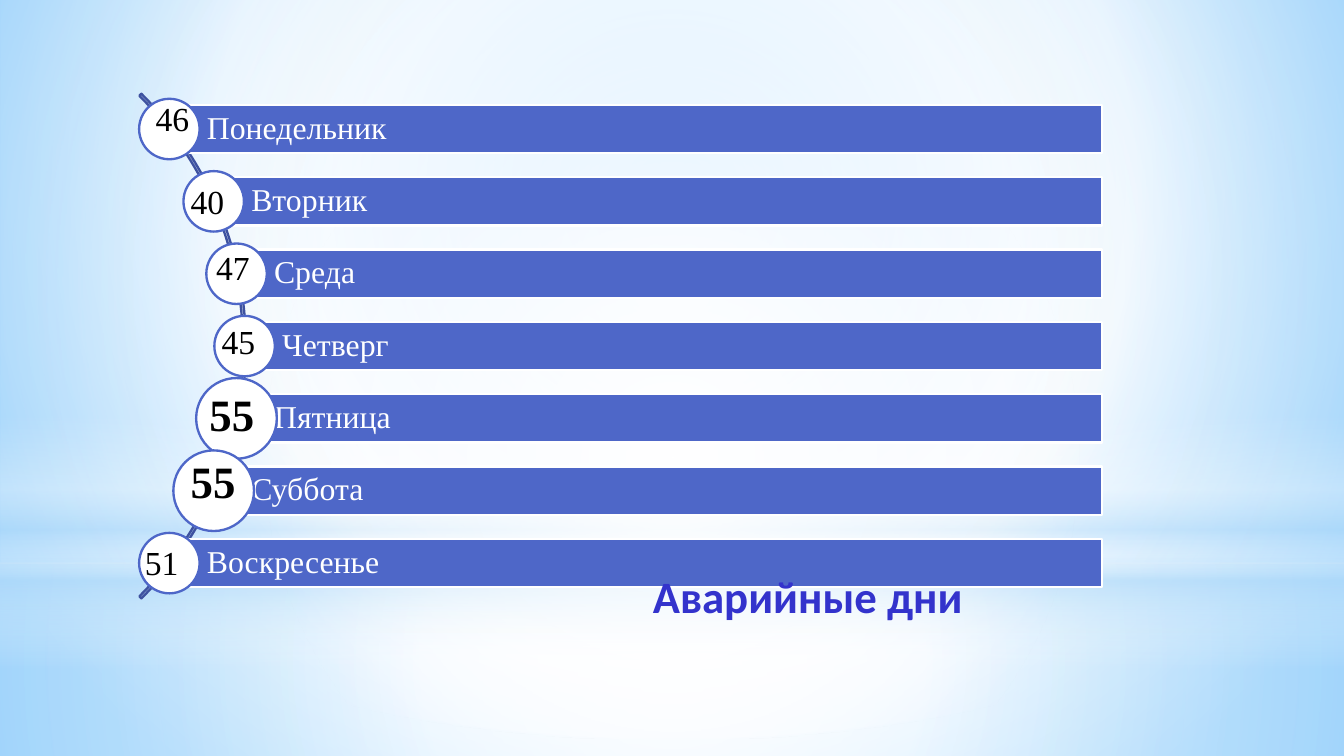
from dataclasses import dataclass

from lxml import etree
from pptx import Presentation
from pptx.dml.color import RGBColor
from pptx.enum.shapes import MSO_SHAPE
from pptx.enum.text import MSO_ANCHOR, PP_ALIGN
from pptx.oxml.ns import qn
from pptx.util import Inches, Pt

RECTANGLE, OVAL, BLOCK_ARC = MSO_SHAPE.RECTANGLE, MSO_SHAPE.OVAL, MSO_SHAPE.BLOCK_ARC
MIDDLE, LEFT, CENTER = MSO_ANCHOR.MIDDLE, PP_ALIGN.LEFT, PP_ALIGN.CENTER

WHITE = RGBColor(0xFF, 0xFF, 0xFF)
BLACK = RGBColor(0x00, 0x00, 0x00)
BAR_BLUE = RGBColor(0x4E, 0x67, 0xC8)
ARC_BLUE = RGBColor(0x3E, 0x52, 0xA0)
TITLE_BLUE = RGBColor(0x33, 0x33, 0xCC)
PALE_BLUE = RGBColor(0xB4, 0xDC, 0xFA)
SKY = RGBColor(0x9E, 0xD5, 0xFF)
DEEP_SKY = RGBColor(0x5B, 0xB9, 0xFF)

SERIF, SANS = "Times New Roman", "Calibri"
SLIDE_WIDTH = 10
SLIDE_HEIGHT = SLIDE_WIDTH * 9 / 16
FIRST_CENTER, LAST_CENTER = 0.96, 4.19
BAR_RIGHT, BAR_HEIGHT = 8.2, 0.36
MIDPOINT = (50, 50, 50, 50)


@dataclass(frozen=True)
class Stop:
    position: int
    color: RGBColor
    opacity: int = 100


@dataclass(frozen=True)
class Glow:
    kind: MSO_SHAPE
    top: float
    height: float
    stops: tuple[Stop, ...]
    focus: tuple[int, ...] | None = MIDPOINT


@dataclass(frozen=True)
class Day:
    name: str
    count: str
    center_x: float
    count_left: float
    count_top: float
    count_width: float
    peak: bool = False


GLOWS = (
    Glow(RECTANGLE, 4.19, 1.44,
         (Stop(0, WHITE, 91), Stop(37, WHITE, 76), Stop(100, PALE_BLUE, 79))),
    Glow(RECTANGLE, 0, 4.19,
         (Stop(0, WHITE, 89), Stop(48, WHITE, 62), Stop(100, PALE_BLUE, 79))),
    Glow(RECTANGLE, 3.09, 1.88,
         (Stop(0, WHITE, 0), Stop(29, WHITE, 30), Stop(45, PALE_BLUE, 40),
          Stop(55, WHITE, 26), Stop(65, PALE_BLUE, 60), Stop(100, WHITE, 0)), None),
    Glow(OVAL, 1.31, 4.19, (Stop(0, WHITE), Stop(56, WHITE, 0))),
)

DAYS = (
    Day("Понедельник", "46", 1.26, 1.06, 0.68, 0.48),
    Day("Вторник", "40", 1.59, 1.32, 1.3, 0.68),
    Day("Среда", "47", 1.76, 1.51, 1.79, 0.54),
    Day("Четверг", "45", 1.82, 1.55, 2.34, 0.62),
    Day("Пятница", "55", 1.76, 1.46, 2.83, 0.54, True),
    Day("Суббота", "55", 1.59, 1.32, 3.33, 0.61, True),
    Day("Воскресенье", "51", 1.26, 0.98, 3.98, 0.59),
)


def set_gradient(fill, owner, stops: tuple[Stop, ...], focus: tuple[int, ...] | None) -> None:
    """Fill with stops: radial around focus (left, top, right, bottom %), else downward."""
    fill.gradient()
    gradient = next(owner.iter(qn("a:gradFill")))
    for child in list(gradient):
        gradient.remove(child)
    stop_list = etree.SubElement(gradient, qn("a:gsLst"))
    for stop in stops:
        mark = etree.SubElement(stop_list, qn("a:gs"), pos=str(stop.position * 1000))
        color = etree.SubElement(mark, qn("a:srgbClr"), val=str(stop.color))
        if stop.opacity < 100:
            etree.SubElement(color, qn("a:alpha"), val=str(stop.opacity * 1000))
    if focus is None:
        etree.SubElement(gradient, qn("a:lin"), ang="5400000", scaled="0")
    else:
        radial = etree.SubElement(gradient, qn("a:path"), path="circle")
        sides = {side: str(value * 1000) for side, value in zip("ltrb", focus)}
        etree.SubElement(radial, qn("a:fillToRect"), **sides)


def add_plain_shape(slide, kind: MSO_SHAPE, left: float, top: float, width: float,
                    height: float, fill: RGBColor | None = None,
                    line: RGBColor | None = None):
    shape = slide.shapes.add_shape(kind, Inches(left), Inches(top), Inches(width), Inches(height))
    shape.shadow.inherit = False
    if fill is None:
        shape.fill.background()
    else:
        shape.fill.solid()
        shape.fill.fore_color.rgb = fill
    if line is None:
        shape.line.fill.background()
    else:
        shape.line.color.rgb = line
        shape.line.width = Pt(1.25)
    return shape


def write(frame, text: str, size: int, color: RGBColor, font: str = SERIF,
          bold: bool = False, align: PP_ALIGN = LEFT):
    frame.word_wrap = True
    paragraph = frame.paragraphs[0]
    paragraph.text = text
    paragraph.alignment = align
    paragraph.font.name = font
    paragraph.font.size = Pt(size)
    paragraph.font.bold = bold
    paragraph.font.color.rgb = color
    return paragraph


def add_label(slide, left: float, top: float, width: float, height: float):
    box = slide.shapes.add_textbox(Inches(left), Inches(top), Inches(width), Inches(height))
    return box.text_frame


def add_day(slide, day: Day, center_y: float) -> None:
    bar = add_plain_shape(slide, RECTANGLE, day.center_x, center_y - BAR_HEIGHT / 2,
                          BAR_RIGHT - day.center_x, BAR_HEIGHT, BAR_BLUE, WHITE)
    frame = bar.text_frame
    frame.vertical_anchor = MIDDLE
    frame.margin_left = Inches(0.28)
    frame.margin_top = frame.margin_right = frame.margin_bottom = Inches(0.05)
    write(frame, day.name, 17, WHITE).line_spacing = 0.9
    diameter = 0.6 if day.peak else 0.45
    add_plain_shape(slide, OVAL, day.center_x - diameter / 2, center_y - diameter / 2,
                    diameter, diameter, WHITE, BAR_BLUE)


def add_count(slide, day: Day) -> None:
    size, height = (24, 0.5) if day.peak else (18, 0.4)
    frame = add_label(slide, day.count_left, day.count_top, day.count_width, height)
    write(frame, day.count, size, BLACK, bold=day.peak)


def main() -> None:
    deck = Presentation()
    deck.slide_width, deck.slide_height = Inches(SLIDE_WIDTH), Inches(SLIDE_HEIGHT)
    slide = deck.slides.add_slide(deck.slide_layouts[6])

    sky_stops = (Stop(0, SKY), Stop(60, WHITE), Stop(100, DEEP_SKY))
    set_gradient(slide.background.fill, slide.element, sky_stops, (20, 10, 20, 60))
    for glow in GLOWS:
        shape = add_plain_shape(slide, glow.kind, 0, glow.top, SLIDE_WIDTH, glow.height)
        set_gradient(shape.fill, shape.element, glow.stops, glow.focus)

    arc = add_plain_shape(slide, BLOCK_ARC, -3.48, -0.08, 5.31, 5.31, line=ARC_BLUE)
    for index, value in enumerate((189, 27, 0.004)):
        arc.adjustments[index] = value

    row_step = (LAST_CENTER - FIRST_CENTER) / (len(DAYS) - 1)
    for row, day in enumerate(DAYS):
        add_day(slide, day, FIRST_CENTER + row * row_step)
    for day in DAYS:
        add_count(slide, day)

    caption = add_label(slide, 2.4, 4.18, 7.17, 0.5)
    caption.margin_left = Inches(0.15)
    write(caption, "Аварийные дни", 24, TITLE_BLUE, SANS, True, CENTER)

    deck.save("out.pptx")


if __name__ == "__main__":
    main()
